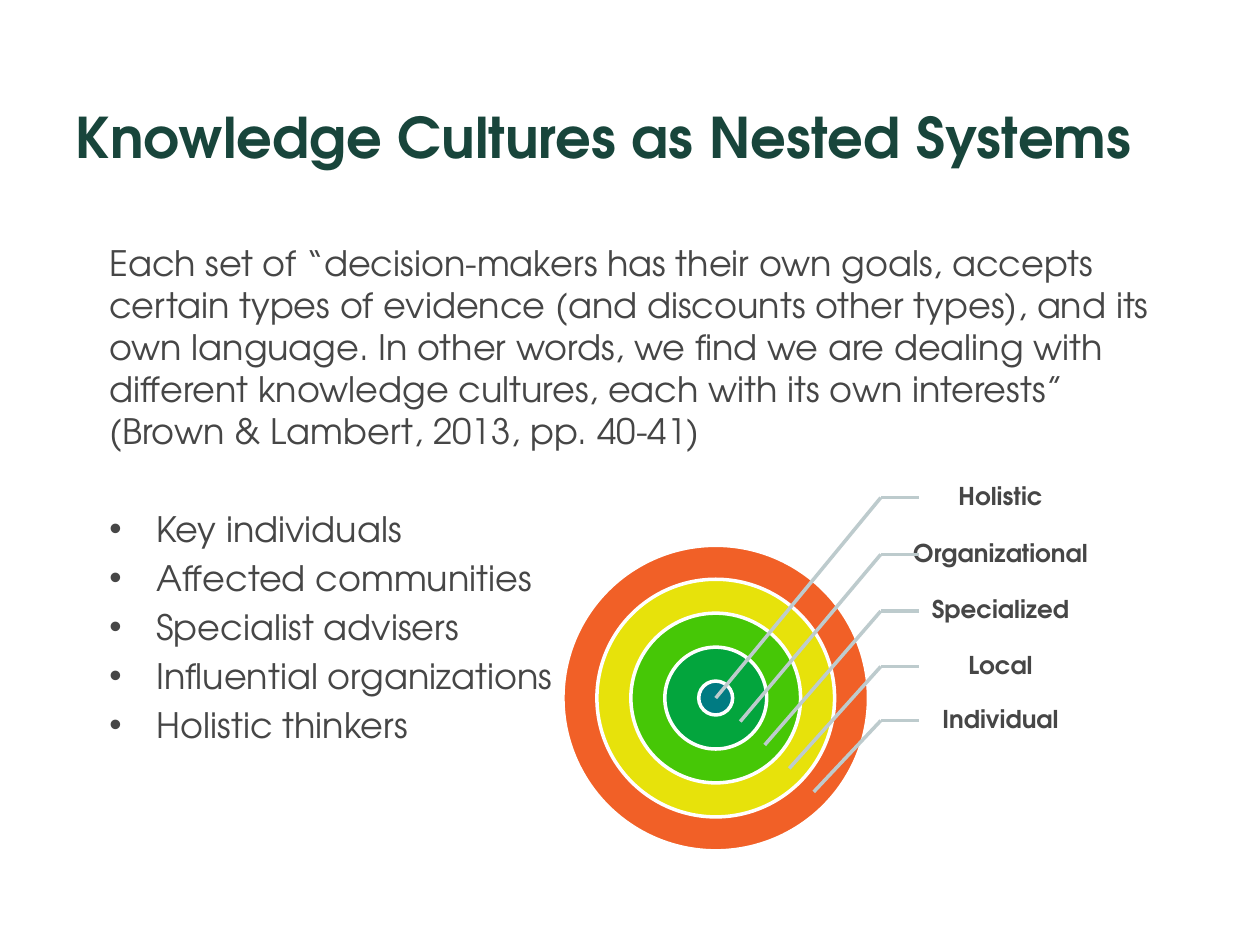
from lxml import etree
from pptx import Presentation
from pptx.dml.color import RGBColor
from pptx.enum import shapes, text
from pptx.oxml import ns
from pptx.util import Pt

FONT = "TeX Gyre Adventor"
GREEN = RGBColor(0x18, 0x45, 0x3B)
GRAY = RGBColor(0x46, 0x46, 0x46)
LEADER = RGBColor(0xBD, 0xCB, 0xCD)
WHITE = RGBColor(0xFF, 0xFF, 0xFF)

TITLE = "Knowledge Cultures as Nested Systems"
QUOTE = (
    "Each set of “decision-makers has their own goals, accepts certain types of "
    "evidence (and discounts other types), and its own language. In other words, "
    "we find we are dealing with different knowledge cultures, each with its own "
    "interests” (Brown & Lambert, 2013, pp. 40-41)"
)
BULLETS = [
    "Key individuals",
    "Affected communities",
    "Specialist advisers",
    "Influential organizations",
    "Holistic thinkers",
]
RING_COLORS = [
    RGBColor(0xF1, 0x60, 0x27),
    RGBColor(0xE7, 0xE2, 0x0B),
    RGBColor(0x46, 0xC7, 0x06),
    RGBColor(0x03, 0xA5, 0x3D),
    RGBColor(0x00, 0x7B, 0x82),
]
LABELS = [
    ("Holistic", 87, 284.4),
    ("Organizational", 132, 316.8),
    ("Specialized", 106.5, 349.2),
    ("Local", 87, 380.9),
    ("Individual", 87, 411.8),
]

CENTER_X, CENTER_Y = 409, 398.9
CORE_DIAMETER = 19.4
TARGET_STEP_X, TARGET_STEP_Y = 14, 13.4
ELBOW_X, LEADER_END_X = 503.3, 524.9
LABEL_CENTER_X, LABEL_HEIGHT = 568.5, 31


def format_text(paragraph, size, color, bold=False):
    for run in paragraph.runs:
        run.font.name = FONT
        run.font.size = Pt(size)
        run.font.bold = bold
        run.font.color.rgb = color


def add_bullet(paragraph):
    properties = paragraph._p.get_or_add_pPr()
    properties.set("marL", str(Pt(27)))
    properties.set("indent", str(Pt(-27)))
    etree.SubElement(properties, ns.qn("a:buFont")).set("typeface", "Arial")
    etree.SubElement(properties, ns.qn("a:buChar")).set("char", "•")


def add_title(slide):
    title = slide.shapes.title
    title.left, title.top, title.width, title.height = Pt(36), Pt(54), Pt(648), Pt(48)
    frame = title.text_frame
    frame.text = TITLE
    frame.auto_size = text.MSO_AUTO_SIZE.NONE
    frame.vertical_anchor = text.MSO_ANCHOR.MIDDLE
    frame.paragraphs[0].alignment = text.PP_ALIGN.LEFT
    format_text(frame.paragraphs[0], 32, GREEN, True)


def add_body(slide):
    frame = slide.shapes.add_textbox(Pt(55.4), Pt(134.6), Pt(623.5), Pt(174.2)).text_frame
    frame.word_wrap = True
    frame.text = QUOTE
    format_text(frame.paragraphs[0], 20, GRAY)
    for index, bullet in enumerate(BULLETS):
        paragraph = frame.add_paragraph()
        paragraph.text = bullet
        add_bullet(paragraph)
        paragraph.space_before = Pt(4 if index else 32)
        format_text(paragraph, 20, GRAY)


def add_ring(group, diameter, color):
    ring = group.shapes.add_shape(
        shapes.MSO_SHAPE.OVAL,
        Pt(CENTER_X - diameter / 2), Pt(CENTER_Y - diameter / 2), Pt(diameter), Pt(diameter),
    )
    ring.shadow.inherit = False
    ring.fill.solid()
    ring.fill.fore_color.rgb = color
    ring.line.color.rgb = WHITE
    ring.line.width = Pt(2)


def add_label(group, label, width, middle):
    frame = group.shapes.add_textbox(
        Pt(LABEL_CENTER_X - width / 2), Pt(middle - LABEL_HEIGHT / 2), Pt(width), Pt(LABEL_HEIGHT)
    ).text_frame
    frame.word_wrap = True
    frame.vertical_anchor = text.MSO_ANCHOR.MIDDLE
    frame.margin_left = Pt(8)
    frame.margin_right = frame.margin_top = frame.margin_bottom = Pt(1.5)
    frame.text = label
    paragraph = frame.paragraphs[0]
    paragraph.alignment = text.PP_ALIGN.CENTER
    paragraph.line_spacing = 0.9
    format_text(paragraph, 14, GRAY, True)


def add_leader(group, elbow_y, end_x, end_y):
    line = group.shapes.add_connector(
        shapes.MSO_CONNECTOR.STRAIGHT, Pt(ELBOW_X), Pt(elbow_y), Pt(end_x), Pt(end_y)
    )
    line.line.color.rgb = LEADER
    line.line.width = Pt(2)
    etree.SubElement(line._element.spPr, ns.qn("a:effectLst"))


def add_diagram(slide):
    group = slide.shapes.add_group_shape()
    for index, color in enumerate(RING_COLORS):
        add_ring(group, CORE_DIAMETER * (9 - 2 * index), color)
    for index, (label, width, middle) in enumerate(LABELS):
        add_label(group, label, width, middle)
        add_leader(group, middle, LEADER_END_X, middle)
        add_leader(
            group, middle, CENTER_X + TARGET_STEP_X * index, CENTER_Y + TARGET_STEP_Y * index
        )


def main():
    presentation = Presentation()
    presentation.slide_width, presentation.slide_height = Pt(720), Pt(540)
    slide = presentation.slides.add_slide(presentation.slide_layouts[5])
    add_title(slide)
    add_body(slide)
    add_diagram(slide)
    presentation.save("out.pptx")


if __name__ == "__main__":
    main()
